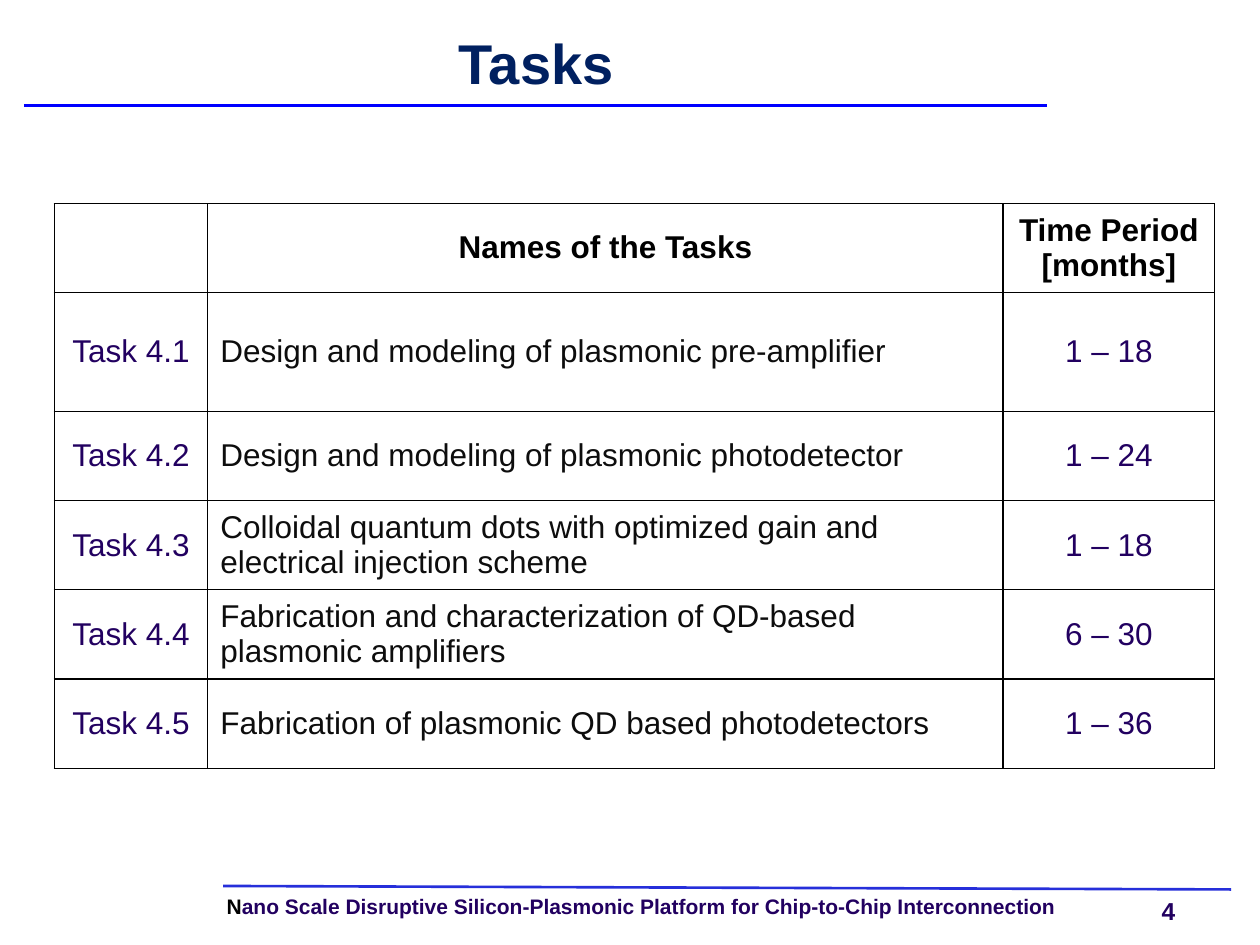
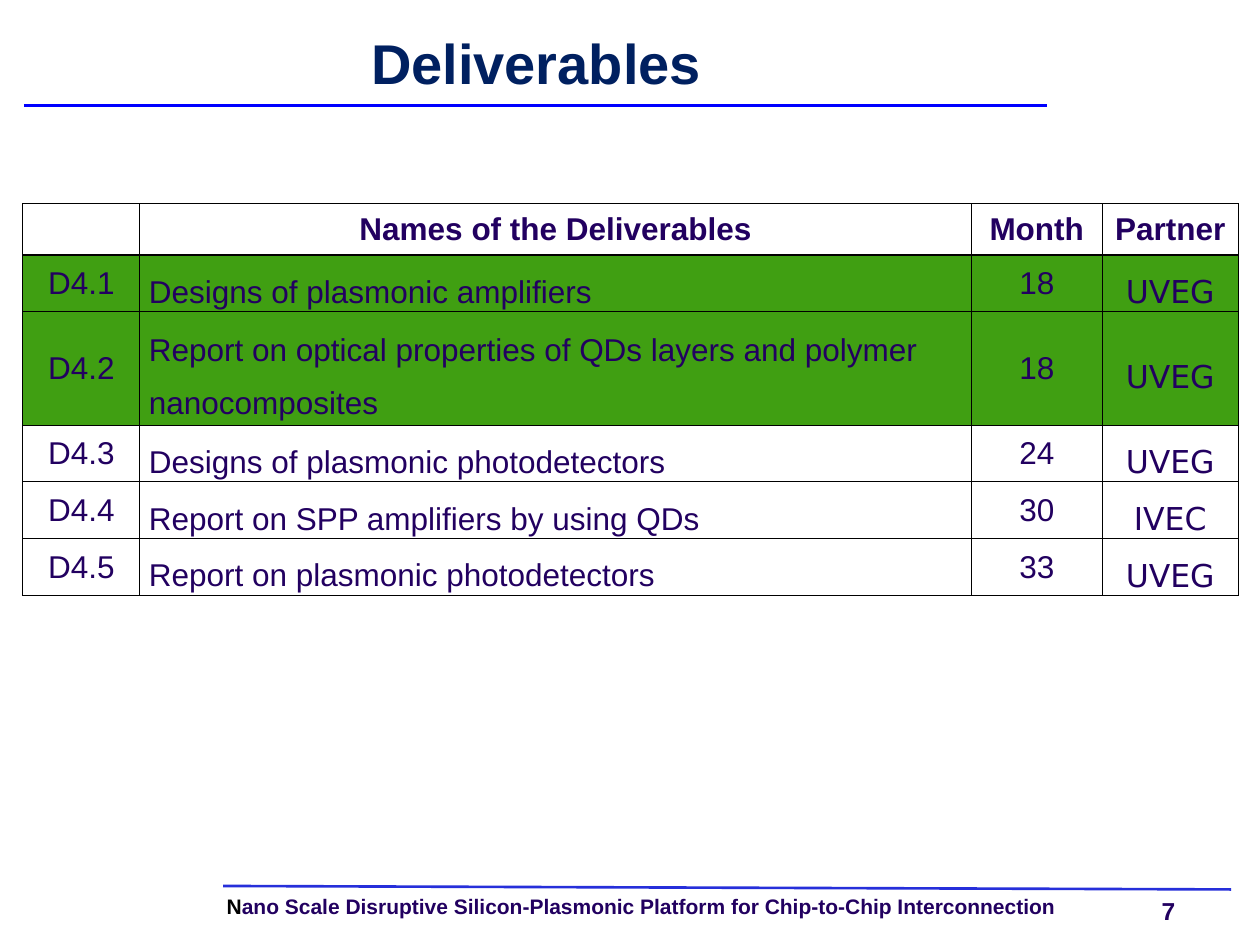
from dataclasses import dataclass

from lxml.etree import SubElement
from pptx import Presentation
from pptx.dml.color import RGBColor
from pptx.enum.shapes import MSO_CONNECTOR
from pptx.enum.text import MSO_ANCHOR, PP_ALIGN
from pptx.oxml.ns import qn
from pptx.util import Cm, Pt


@dataclass(frozen=True)
class Theme:
    font: str = "Arial"
    partner_font: str = "DejaVu Sans"
    black: str = "000000"
    near_black: str = "0D0D0D"
    indigo: str = "220060"
    title_color: str = "002060"
    title_rule: str = "0000FF"
    footer_rule: str = "262FDA"
    done_fill: str = "409F12"
    title_size: int = 32
    table_size: int = 18
    number_size: int = 14
    footer_size: int = 12
    rule_width: float = 1.5
    border_width: float = 0.75


THEME = Theme()


@dataclass(frozen=True)
class Column:
    width: float
    color: str = THEME.indigo
    font: str = THEME.font
    centered: bool = True
    tight: bool = False  # narrow insets and wide line spacing


class Deck:
    """Holds the theme and the slide being built."""

    def __init__(self, theme):
        self.theme = theme
        self.presentation = Presentation()
        self.presentation.slide_width = Cm(25.4)
        self.presentation.slide_height = Cm(19.05)
        self.slide = None

    def add_slide(self, title, number):
        theme = self.theme
        self.slide = self.presentation.slides.add_slide(
            self.presentation.slide_layouts[6])

        # Footer
        footer = self.add_text((4.57, 18.06, 18.14, 0.46), [
            ("N", theme.black),
            ("ano Scale Disruptive Silicon-Plasmonic Platform for "
             "Chip-to-Chip Interconnection", theme.indigo),
        ], theme.footer_size)
        footer.line_spacing = 0.9
        self.add_text((23.42, 18.06, 1.02, 0.58),
                      [(str(number), theme.indigo)], theme.number_size)
        self.add_rule((4.5, 17.86), (24.82, 17.93), theme.footer_rule)

        # Title
        self.add_rule((0.48, 2.13), (21.11, 2.13), theme.title_rule)
        heading = self.add_text((0.51, 0.51, 20.6, 1.7),
                                [(title, theme.title_color)],
                                theme.title_size, MSO_ANCHOR.MIDDLE)
        heading.alignment = PP_ALIGN.CENTER
        heading.line_spacing = Pt(theme.title_size)

    def add_run(self, paragraph, text, size, color, bold, font):
        run = paragraph.add_run()
        run.text = text
        run.font.name = font
        run.font.size = Pt(size)
        run.font.bold = bold
        run.font.color.rgb = RGBColor.from_string(color)

    def add_text(self, box, runs, size, anchor=MSO_ANCHOR.TOP):
        frame = self.slide.shapes.add_textbox(*map(Cm, box)).text_frame
        frame.word_wrap = True
        frame.vertical_anchor = anchor
        frame.margin_left = frame.margin_right = 0
        frame.margin_top = frame.margin_bottom = 0
        paragraph = frame.paragraphs[0]
        for text, color in runs:
            self.add_run(paragraph, text, size, color, True, self.theme.font)
        return paragraph

    def add_rule(self, start, end, color):
        rule = self.slide.shapes.add_connector(
            MSO_CONNECTOR.STRAIGHT, *map(Cm, start + end))
        rule.line.color.rgb = RGBColor.from_string(color)
        rule.line.width = Pt(self.theme.rule_width)
        SubElement(rule._element.spPr, qn("a:effectLst"))

    def add_table(self, position, columns, heights, headings, header_color,
                  rows, done_rows=0):
        width = sum(column.width for column in columns)
        table = self.slide.shapes.add_table(
            len(heights), len(columns), *map(Cm, position),
            Cm(width), Cm(sum(heights))).table
        for table_column, column in zip(table.columns, columns):
            table_column.width = Cm(column.width)
        for table_row, height in zip(table.rows, heights):
            table_row.height = Cm(height)

        header_columns = [Column(column.width, header_color)
                          for column in columns]
        for row_index, texts in enumerate([headings, *rows]):
            is_header = row_index == 0
            styles = header_columns if is_header else columns
            is_done = 0 < row_index <= done_rows
            for column_index, (text, style) in enumerate(zip(texts, styles)):
                cell = table.cell(row_index, column_index)
                self.style_cell(cell, style, is_done)
                if text:
                    self.add_run(cell.text_frame.paragraphs[0], text,
                                 self.theme.table_size, style.color,
                                 is_header, style.font)

    def style_cell(self, cell, style, is_done):
        cell.vertical_anchor = MSO_ANCHOR.MIDDLE
        paragraph = cell.text_frame.paragraphs[0]
        paragraph.alignment = (PP_ALIGN.CENTER if style.centered
                               else PP_ALIGN.LEFT)
        if style.tight:
            paragraph.line_spacing = 1.5
            cell.margin_left = cell.margin_right = Cm(0.18)
            cell.margin_top = cell.margin_bottom = 0

        # Borders come before the fill in the cell properties
        properties = cell._tc.get_or_add_tcPr()
        for side in ("lnL", "lnR", "lnT", "lnB"):
            border = SubElement(properties, qn(f"a:{side}"),
                                w=str(Pt(self.theme.border_width)))
            fill = SubElement(border, qn("a:solidFill"))
            SubElement(fill, qn("a:srgbClr"), val=self.theme.black)
        if is_done:
            cell.fill.solid()
            cell.fill.fore_color.rgb = RGBColor.from_string(
                self.theme.done_fill)
        else:
            cell.fill.background()


def main():
    deck = Deck(THEME)

    # Tasks
    deck.add_slide("Tasks", 4)
    deck.add_table(
        (1.09, 4.11),
        [Column(3.1), Column(16.03, THEME.near_black, centered=False),
         Column(4.27)],
        [1.68, 2.4] + [1.8] * 4,
        ["", "Names of the Tasks", "Time Period [months]"], THEME.black,
        [
            ("Task 4.1", "Design and modeling of plasmonic pre-amplifier",
             "1 – 18"),
            ("Task 4.2", "Design and modeling of plasmonic photodetector",
             "1 – 24"),
            ("Task 4.3", "Colloidal quantum dots with optimized gain and "
             "electrical injection scheme", "1 – 18"),
            ("Task 4.4", "Fabrication and characterization of QD-based "
             "plasmonic amplifiers", "6 – 30"),
            ("Task 4.5", "Fabrication of plasmonic QD based photodetectors",
             "1 – 36"),
        ])

    # Deliverables
    deck.add_slide("Deliverables", 7)
    deck.add_table(
        (0.46, 4.11),
        [Column(2.36), Column(16.76, centered=False, tight=True),
         Column(2.64), Column(2.74, font=THEME.partner_font, tight=True)],
        [1.03, 1.11, 2.13] + [1.11] * 3,
        ["", "Names of the Deliverables", "Month", "Partner"], THEME.indigo,
        [
            ("D4.1", "Designs of plasmonic amplifiers", "18", "UVEG"),
            ("D4.2", "Report on optical properties of QDs layers and polymer "
             "nanocomposites", "18", "UVEG"),
            ("D4.3", "Designs of plasmonic photodetectors", "24", "UVEG"),
            ("D4.4", "Report on SPP amplifiers by using QDs", "30", "IVEC"),
            ("D4.5", "Report on plasmonic photodetectors", "33", "UVEG"),
        ],
        done_rows=2)

    deck.presentation.save("out.pptx")


if __name__ == "__main__":
    main()
